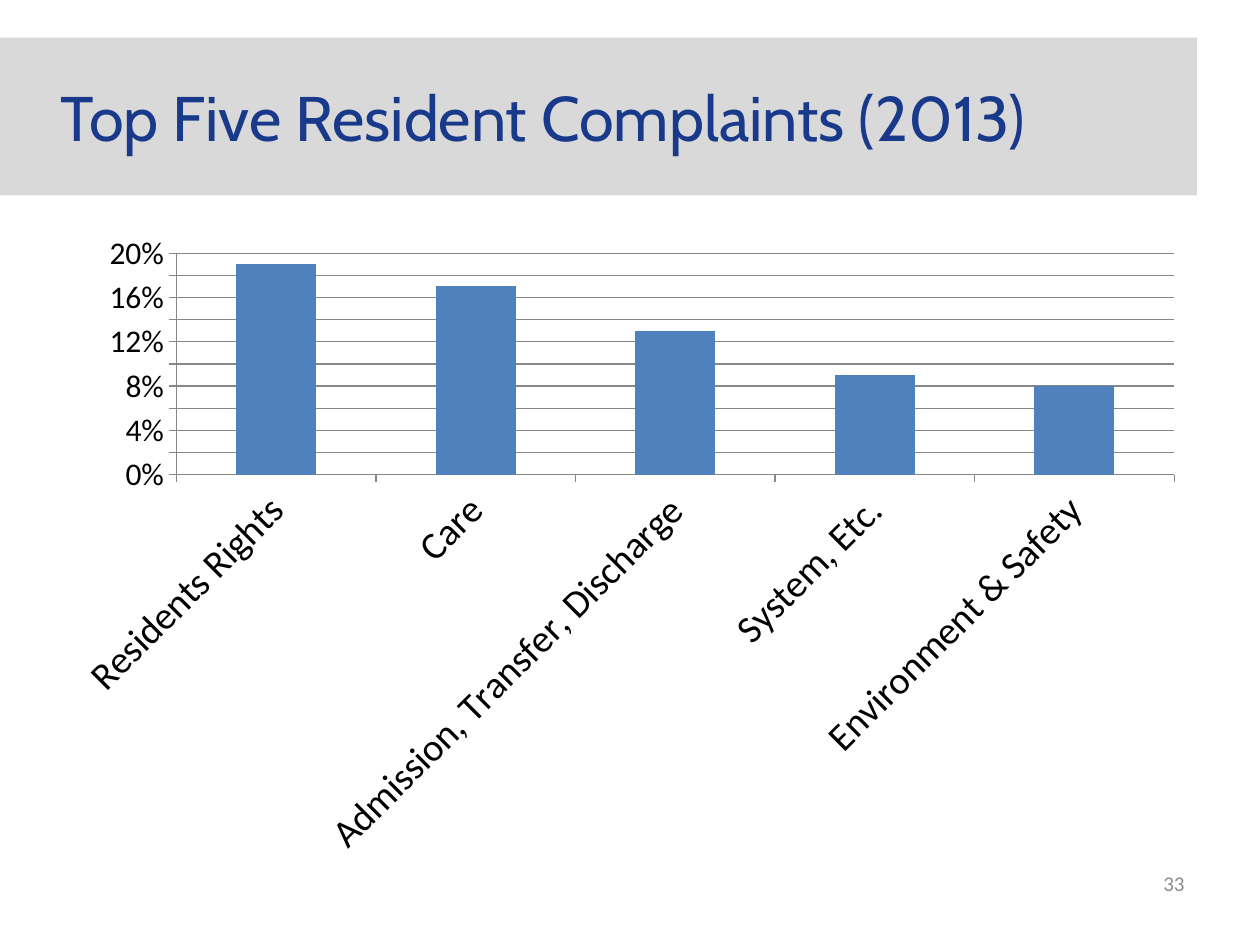
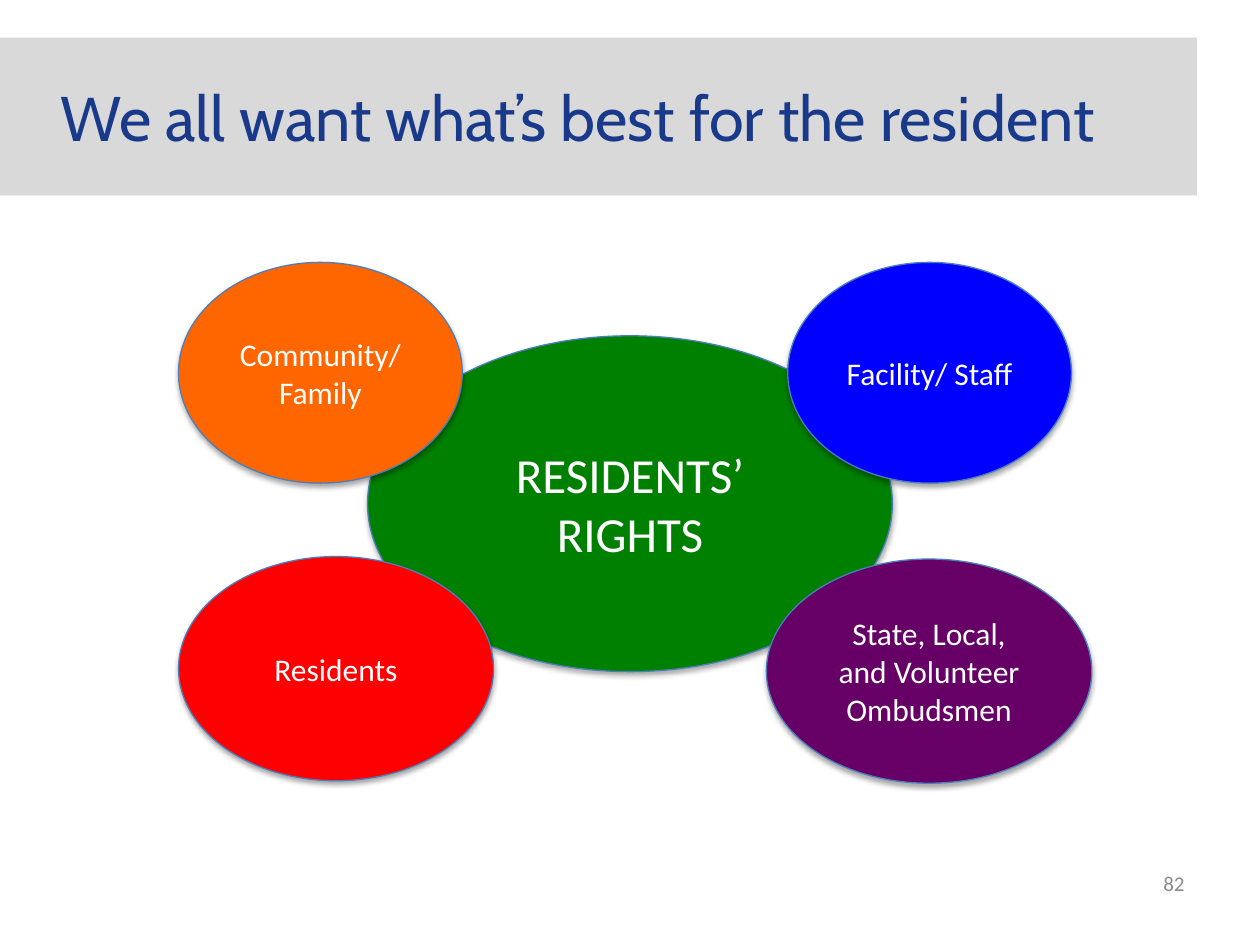
import lxml.etree
import pptx
import pptx.chart.data
import pptx.dml.color
import pptx.enum.chart
import pptx.enum.shapes
import pptx.enum.text
import pptx.oxml
import pptx.oxml.ns
import pptx.util

Cm = pptx.util.Cm
Pt = pptx.util.Pt
ALIGN = pptx.enum.text.PP_ALIGN
SHAPES = pptx.enum.shapes.MSO_SHAPE

COLORS = {
    "band": "D9D9D9", "title": "19398A", "number": "8C8C8C",
    "text": "000000", "white": "FFFFFF", "bar": "4F81BD", "grid": "878787",
    "outline": "4B7EBC", "rights": "008000", "community": "FF6600",
    "facility": "0000FF", "residents": "FF0000", "ombudsmen": "660066",
}
TITLE_BAND = (0, 0.76, 24.13, 3.18)
NUMBER_BOX = (18.62, 17.3, 5.51, 1.02)
CHART_BOX = (1.27, 4.45, 22.86, 13.13)
DIAGRAM_ORIGIN = (3.6, 5.29)

COMPLAINTS = {
    "Residents Rights": 0.19,
    "Care": 0.17,
    "Admission, Transfer, Discharge": 0.13,
    "System, Etc.": 0.09,
    "Environment & Safety": 0.08,
}
PARTIES = [
    ("RESIDENTS’ RIGHTS", "rights", 28, (3.81, 1.48, 10.58, 6.77)),
    ("Community/ Family", "community", 18, (0, 0, 5.72, 4.45)),
    ("Facility/ Staff", "facility", 18, (12.28, 0, 5.72, 4.45)),
    ("Residents", "residents", 18, (0, 5.93, 6.35, 4.52)),
    ("State, Local, and Volunteer Ombudsmen", "ombudsmen", 18,
     (11.85, 5.98, 6.56, 4.52)),
]
SHADOW = (
    f'<a:effectLst {pptx.oxml.ns.nsdecls("a")}>'
    '<a:outerShdw blurRad="39370" dist="22860" dir="5400000" rotWithShape="0">'
    '<a:srgbClr val="000000"><a:alpha val="35000"/></a:srgbClr>'
    '</a:outerShdw></a:effectLst>'
)
PLOT_LAYOUT = {"x": 0.1, "y": 0.05, "w": 0.88, "h": 0.34}


def rgb(name):
    return pptx.dml.color.RGBColor.from_string(COLORS[name])


def lengths(box):
    return [Cm(value) for value in box]


def apply(target, settings):
    for attribute, value in settings.items():
        setattr(target, attribute, value)


def set_font(font, face, size, color):
    apply(font, {"name": face, "size": Pt(size)})
    font.color.rgb = rgb(color)


def write(frame, text, face, size, color, align):
    apply(frame, {"word_wrap": True, "text": text,
                  "vertical_anchor": pptx.enum.text.MSO_ANCHOR.MIDDLE})
    paragraph = frame.paragraphs[0]
    paragraph.alignment = align
    set_font(paragraph.font, face, size, color)


def add_filled(slide, preset, box, color):
    shape = slide.shapes.add_shape(preset, *lengths(box))
    shape.shadow.inherit = False
    shape.fill.solid()
    shape.fill.fore_color.rgb = rgb(color)
    return shape


def add_framed_slide(deck, title, number):
    slide = deck.slides.add_slide(deck.slide_layouts[6])
    band = add_filled(slide, SHAPES.RECTANGLE, TITLE_BAND, "band")
    band.line.fill.background()
    band.text_frame.margin_left = Cm(1.22)
    write(band.text_frame, title, "Cabin", 36, "title", ALIGN.LEFT)
    number_box = slide.shapes.add_textbox(*lengths(NUMBER_BOX))
    write(number_box.text_frame, number, "Calibri", 12, "number", ALIGN.RIGHT)
    return slide


def fix_plot_layout(chart):
    plot_area = chart.plots[0]._element.getparent()
    for old in plot_area.findall(pptx.oxml.ns.qn("c:layout")):
        plot_area.remove(old)
    sizes = "".join(f'<c:{key} val="{value}"/>' for key, value in PLOT_LAYOUT.items())
    plot_area.insert(0, pptx.oxml.parse_xml(
        f'<c:layout {pptx.oxml.ns.nsdecls("c")}><c:manualLayout>'
        '<c:layoutTarget val="inner"/><c:xMode val="edge"/><c:yMode val="edge"/>'
        f'{sizes}</c:manualLayout></c:layout>'))


def add_complaints_chart(slide, box):
    data = pptx.chart.data.CategoryChartData(number_format="0%")
    data.categories = list(COMPLAINTS)
    data.add_series("Series 1", list(COMPLAINTS.values()))
    chart = slide.shapes.add_chart(
        pptx.enum.chart.XL_CHART_TYPE.COLUMN_CLUSTERED, *lengths(box), data).chart
    apply(chart, {"has_legend": False, "has_title": False})
    set_font(chart.font, "Calibri", 18, "text")
    plot = chart.plots[0]
    apply(plot, {"gap_width": 150, "vary_by_categories": False})
    bars = plot.series[0]
    bars.format.fill.solid()
    bars.format.fill.fore_color.rgb = rgb("bar")

    percent_axis, complaint_axis = chart.value_axis, chart.category_axis
    apply(percent_axis, {"minimum_scale": 0, "maximum_scale": 0.2,
                         "major_unit": 0.02, "has_major_gridlines": True})
    apply(percent_axis.tick_labels, {"number_format": "0%",
                                     "number_format_is_linked": False})
    for axis, size in ((percent_axis, 18), (complaint_axis, 22)):
        axis.major_tick_mark = pptx.enum.chart.XL_TICK_MARK.OUTSIDE
        set_font(axis.tick_labels.font, "Calibri", size, "text")
    for rule in (percent_axis.format, complaint_axis.format,
                 percent_axis.major_gridlines.format):
        rule.line.color.rgb = rgb("grid")
        rule.line.width = Pt(0.75)
    label_body = complaint_axis._element.find(
        f'{pptx.oxml.ns.qn("c:txPr")}/{pptx.oxml.ns.qn("a:bodyPr")}')
    label_body.set("rot", "-2700000")
    label_body.set("vert", "horz")
    fix_plot_layout(chart)


def add_parties_diagram(slide, origin):
    left, top = origin
    for label, color, size, (x, y, width, height) in PARTIES:
        oval = add_filled(slide, SHAPES.OVAL, (left + x, top + y, width, height), color)
        oval.line.color.rgb = rgb("outline")
        oval.line.width = Pt(0.75)
        properties = oval._element.spPr
        properties.replace(properties.find(pptx.oxml.ns.qn("a:effectLst")),
                           pptx.oxml.parse_xml(SHADOW))
        write(oval.text_frame, label, "Calibri", size, "white", ALIGN.CENTER)


def main():
    deck = pptx.Presentation()
    apply(deck, {"slide_width": Cm(25.4), "slide_height": Cm(19.05)})
    complaints = add_framed_slide(deck, "Top Five Resident Complaints (2013)", "33")
    add_complaints_chart(complaints, CHART_BOX)
    parties = add_framed_slide(deck, "We all want what’s best for the resident", "82")
    add_parties_diagram(parties, DIAGRAM_ORIGIN)
    deck.save("out.pptx")


if __name__ == "__main__":
    main()
